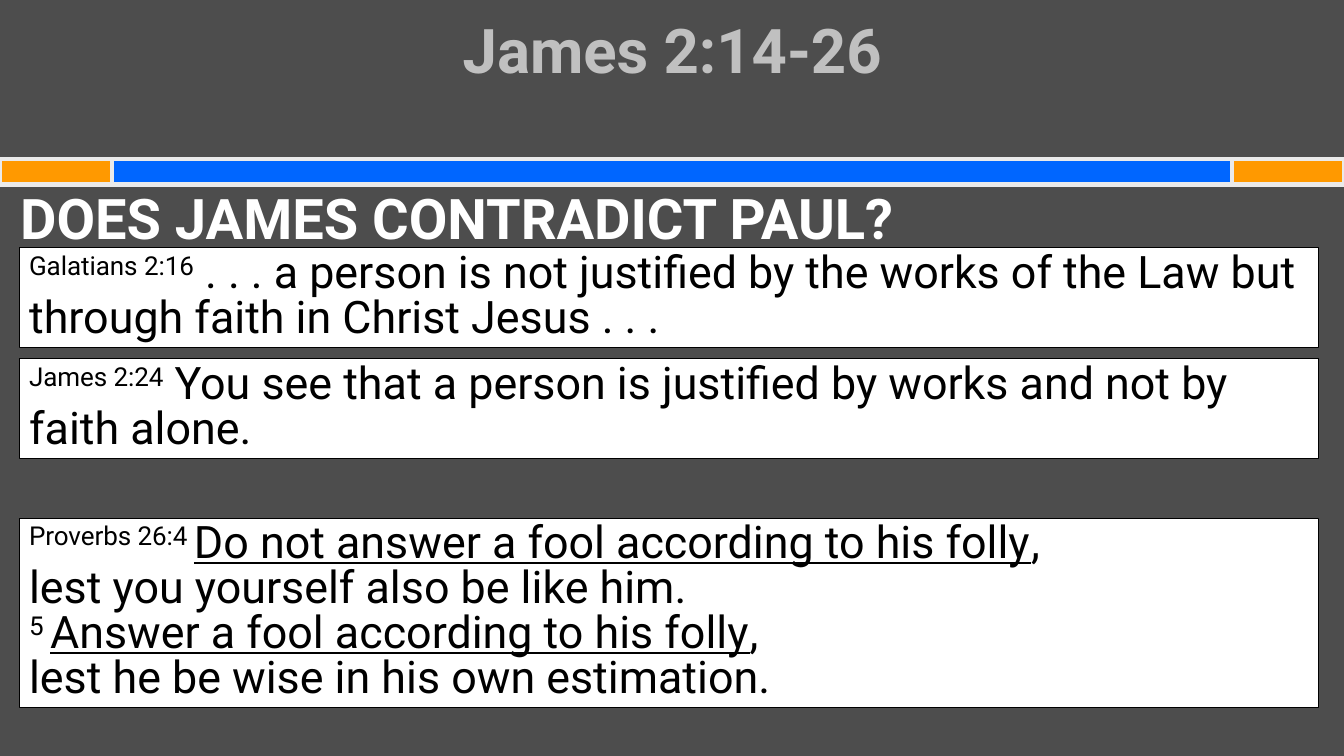
from pptx import Presentation
from pptx.dml.color import RGBColor
from pptx.enum.shapes import MSO_SHAPE
from pptx.enum.text import MSO_ANCHOR, MSO_AUTO_SIZE, PP_ALIGN
from pptx.util import Inches, Pt

RECTANGLE = MSO_SHAPE.RECTANGLE
TOP = MSO_ANCHOR.TOP
LEFT, CENTER = PP_ALIGN.LEFT, PP_ALIGN.CENTER
NO_AUTOFIT = MSO_AUTO_SIZE.NONE

GREY = RGBColor(0x4D, 0x4D, 0x4D)
SILVER = RGBColor(0xC0, 0xC0, 0xC0)
PALE = RGBColor(0xEA, 0xEA, 0xEA)
BLUE = RGBColor(0x00, 0x66, 0xFF)
ORANGE = RGBColor(0xFF, 0x99, 0x00)
WHITE = RGBColor(0xFF, 0xFF, 0xFF)
BLACK = RGBColor(0x00, 0x00, 0x00)

FONT = "Roboto"
SLIDE_WIDTH, SLIDE_HEIGHT = 13.33, 7.5
BAND_TOP, BAND_HEIGHT = 1.58, 0.25
BAND_END = SLIDE_WIDTH / 12
VERSE_LEFT, VERSE_WIDTH = 0.19, 12.89
VERSE_LINE = 32  # points
VERSE_PADDING = 0.1

# Each verse box: top, number of lines, and (text, style) pieces.
VERSES = [
    (2.46, 2, [
        ("Galatians 2:16", "raised"),
        (" . . . a person is not justified by the works of the Law but "
         "through faith in Christ Jesus . . .", "plain"),
    ]),
    (3.56, 2, [
        ("James 2:24", "raised"),
        (" You see that a person is justified by works and not by faith alone.", "plain"),
    ]),
    (5.14, 4, [
        ("Proverbs 26:4 ", "raised"),
        ("Do not answer a fool according to his folly", "underlined"),
        (", \nlest you yourself also be like him. \n", "plain"),
        ("5 ", "raised"),
        ("Answer a fool according to his folly", "underlined"),
        (", \nlest he be wise in his own estimation.", "plain"),
    ]),
]


def add_text(paragraph, text, size=32, color=BLACK, bold=False, style="plain"):
    """Append text to a paragraph, turning each newline into a line break."""
    for index, line in enumerate(text.split("\n")):
        if index:
            paragraph.add_line_break()
        if not line:
            continue
        run = paragraph.add_run()
        run.text = line
        run.font.name = FONT
        run.font.size = Pt(size)
        run.font.bold = bold
        run.font.color.rgb = color
        if style == "underlined":
            run.font.underline = True
        elif style == "raised":
            run._r.get_or_add_rPr().set("baseline", "30000")


def place(shape, left, top, width, height):
    shape.left, shape.top = Inches(left), Inches(top)
    shape.width, shape.height = Inches(width), Inches(height)


def add_box(slide, left, top, width, height, fill, line, line_width):
    box = slide.shapes.add_shape(
        RECTANGLE, Inches(left), Inches(top), Inches(width), Inches(height))
    box.shadow.inherit = False
    box.fill.solid()
    box.fill.fore_color.rgb = fill
    box.line.color.rgb = line
    box.line.width = Pt(line_width)
    return box


def add_band(slide):
    for left, width, color in (
        (0, SLIDE_WIDTH, BLUE),
        (0, BAND_END, ORANGE),
        (SLIDE_WIDTH - BAND_END, BAND_END, ORANGE),
    ):
        add_box(slide, left, BAND_TOP, width, BAND_HEIGHT, color, PALE, 3)


def fill_title(title):
    place(title, 0.67, 0.3, 12, 1.12)
    frame = title.text_frame
    frame.auto_size = NO_AUTOFIT
    frame.vertical_anchor = TOP
    frame.margin_top = 0
    paragraph = frame.paragraphs[0]
    paragraph.alignment = CENTER
    paragraph.line_spacing = Pt(40)
    add_text(paragraph, "James 2:14-26", size=44, color=SILVER, bold=True)


def fill_heading(body):
    place(body, 0.1, 1.95, 12.95, 5.35)
    frame = body.text_frame
    frame.auto_size = NO_AUTOFIT
    frame.vertical_anchor = TOP
    paragraph = frame.paragraphs[0]
    paragraph.line_spacing = 0.7
    paragraph.space_before = Pt(14.4)
    properties = paragraph._p.get_or_add_pPr()
    properties.set("marL", "0")
    properties.set("indent", "0")
    properties.insert_element_before(
        properties.makeelement(
            "{http://schemas.openxmlformats.org/drawingml/2006/main}buNone", {}),
        "a:tabLst", "a:defRPr", "a:extLst")
    add_text(paragraph, "DOES JAMES CONTRADICT PAUL?", size=40, color=WHITE, bold=True)


def add_verse(slide, top, line_count, pieces):
    height = line_count * VERSE_LINE / 72 + VERSE_PADDING
    box = add_box(slide, VERSE_LEFT, top, VERSE_WIDTH, height, WHITE, BLACK, 0.75)
    frame = box.text_frame
    frame.word_wrap = True
    frame.vertical_anchor = TOP
    paragraph = frame.paragraphs[0]
    paragraph.alignment = LEFT
    paragraph.line_spacing = Pt(VERSE_LINE)
    for text, style in pieces:
        add_text(paragraph, text, style=style)


def main():
    presentation = Presentation()
    presentation.slide_width = Inches(SLIDE_WIDTH)
    presentation.slide_height = Inches(SLIDE_HEIGHT)
    slide = presentation.slides.add_slide(presentation.slide_layouts[1])
    slide.background.fill.solid()
    slide.background.fill.fore_color.rgb = GREY
    add_band(slide)
    fill_title(slide.shapes.title)
    fill_heading(slide.placeholders[1])
    for verse in VERSES:
        add_verse(slide, *verse)
    presentation.save("out.pptx")


if __name__ == "__main__":
    main()
